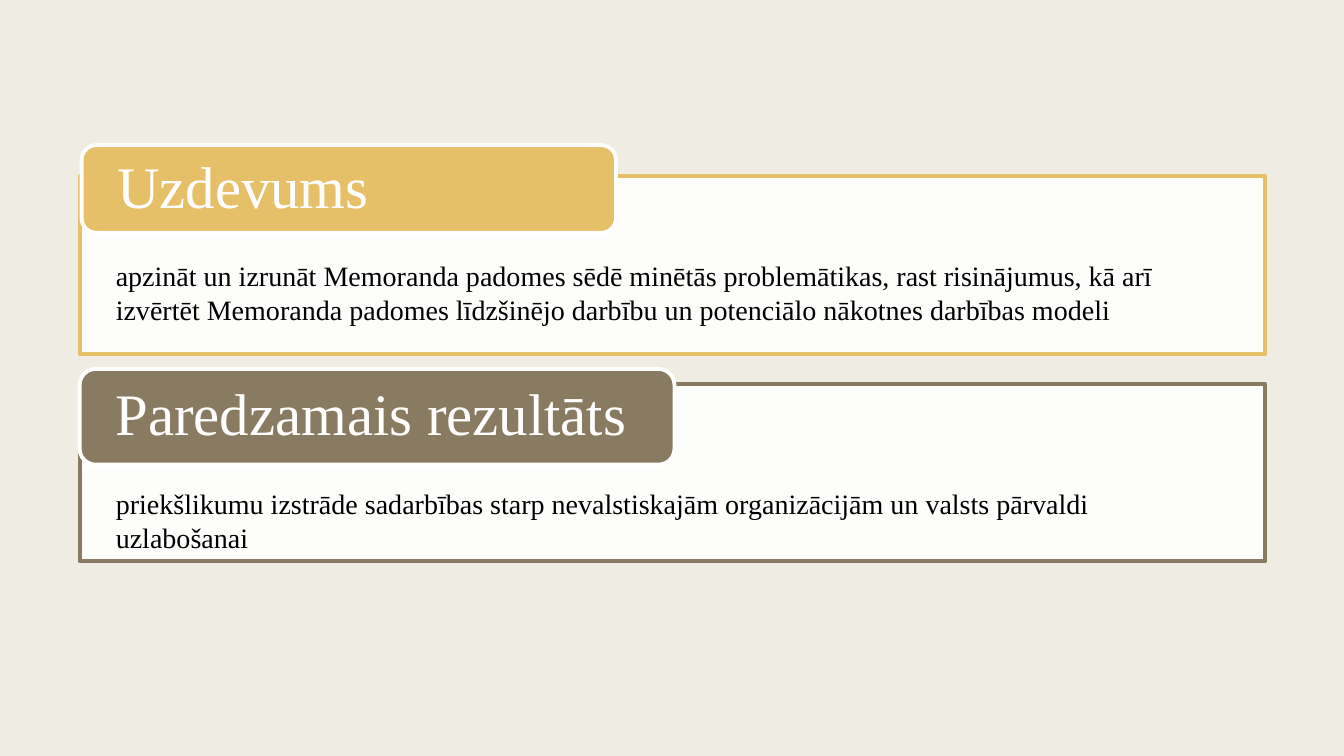
from lxml.etree import SubElement
from pptx import Presentation
from pptx.dml.color import RGBColor
from pptx.enum.shapes import MSO_SHAPE as Shape
from pptx.enum.text import MSO_ANCHOR as Anchor, PP_ALIGN as Align
from pptx.oxml.ns import qn
from pptx.util import Pt

SCALE = 9144  # EMU per px, 100 px to the inch


def px(*sizes):
    return [size * SCALE for size in sizes]


def color(code):
    return RGBColor.from_string(code)


class Deck:
    font = "Times New Roman"
    white, black, back = "FFFFFF", "000000", "EFEDE3"
    line = 2.75

    def __init__(self, wide, high):
        self.prs = Presentation()
        self.prs.slide_width, self.prs.slide_height = px(wide, high)
        self.slide = self.prs.slides.add_slide(self.prs.slide_layouts[6])
        fill = self.slide.background.fill
        fill.solid()
        fill.fore_color.rgb = color(self.back)

    def block(self, kind, box, fill, edge):
        shape = self.slide.shapes.add_shape(kind, *px(*box))
        shape.shadow.inherit = False
        shape.fill.solid()
        shape.fill.fore_color.rgb = color(fill)
        shape.line.color.rgb = color(edge)
        shape.line.width = Pt(self.line)
        return shape

    def label(self, frame, text, size, tint):
        frame.word_wrap = True
        frame.text = text
        par = frame.paragraphs[0]
        par.alignment = Align.LEFT
        font = par.runs[0].font
        font.name, font.size = self.font, Pt(size)
        font.color.rgb = color(tint)
        return par

    def panel(self, box, edge):
        """Draw an outlined box with a slightly see-through white fill."""
        shape = self.block(Shape.RECTANGLE, box, self.white, edge)
        tone = next(shape.element.spPr.find(qn("a:solidFill")).iterchildren())
        SubElement(tone, qn("a:alpha"), val="90000")

    def tab(self, box, text, fill):
        shape = self.block(Shape.ROUNDED_RECTANGLE, box, fill, self.white)
        frame = shape.text_frame
        frame.margin_left, frame.margin_right = px(31, 31)
        frame.margin_top = frame.margin_bottom = 0
        frame.vertical_anchor = Anchor.MIDDLE
        self.label(frame, text, 42, self.white).line_spacing = 0.9

    def body(self, box, text):
        frame = self.slide.shapes.add_textbox(*px(*box)).text_frame
        self.label(frame, text, 20, self.black)


def main():
    deck = Deck(1333, 750)
    parts = [
        (175, (81, 144, 530, 87), 252, "E6C069", "Uzdevums",
         "apzināt un izrunāt Memoranda padomes sēdē minētās problemātikas, "
         "rast risinājumus, kā arī izvērtēt Memoranda padomes līdzšinējo "
         "darbību un potenciālo nākotnes darbības modeli"),
        (381, (79, 366, 590, 95), 478, "897B61", "Paredzamais rezultāts",
         "priekšlikumu izstrāde sadarbības starp nevalstiskajām "
         "organizācijām un valsts pārvaldi uzlabošanai"),
    ]
    for top, tab, low, tint, title, text in parts:
        deck.panel((79, top, 1176, 176), tint)
        deck.tab(tab, title, tint)
        deck.body((105, low, 1121, 77), text)
    deck.prs.save("out.pptx")


if __name__ == "__main__":
    main()
